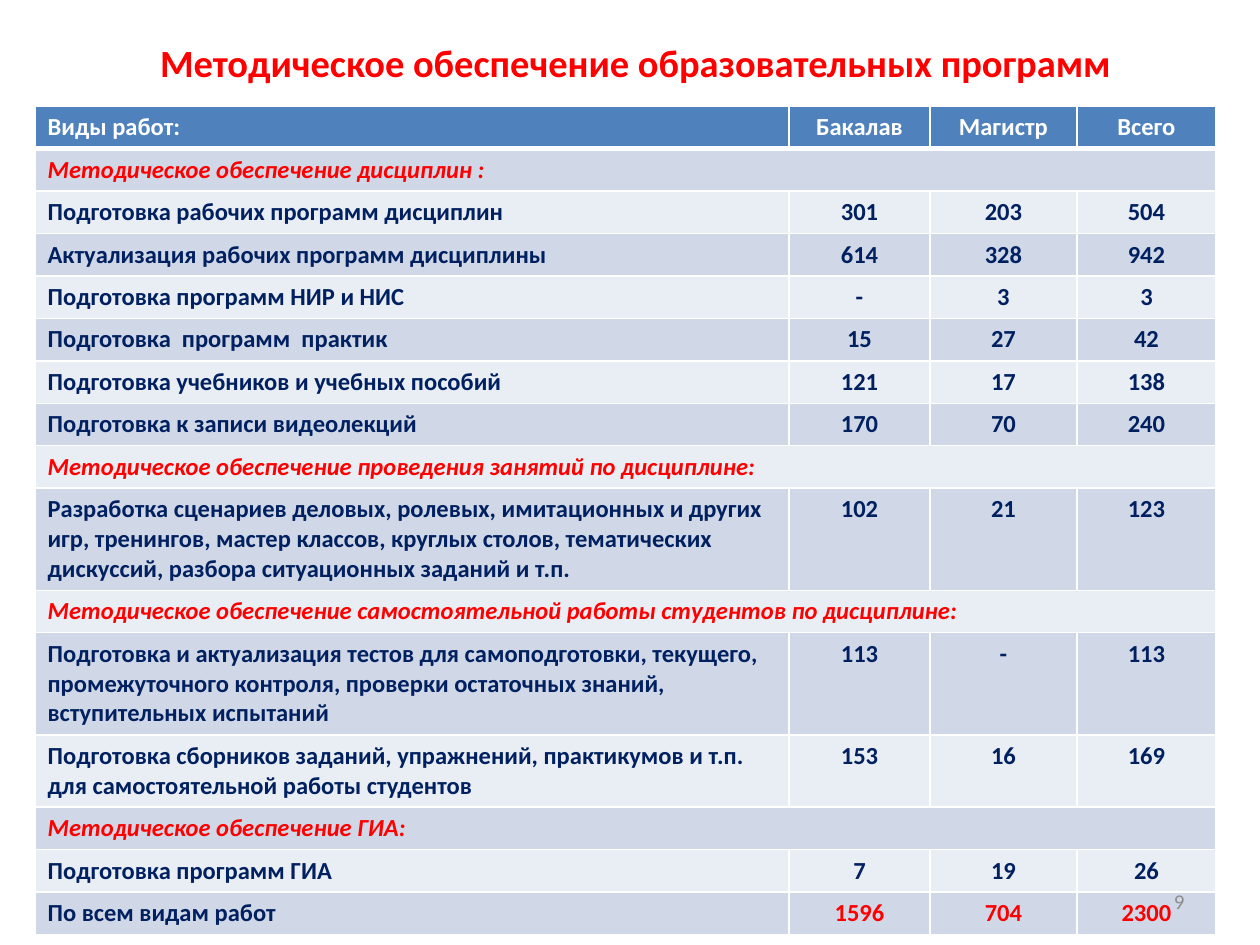
"""Build a slide with a table of methodical support for educational programmes."""
from dataclasses import dataclass

from lxml import etree
from pptx import Presentation
from pptx.dml.color import RGBColor
from pptx.enum.text import MSO_ANCHOR, PP_ALIGN
from pptx.oxml.ns import qn
from pptx.util import Emu, Pt

LEFT, CENTER, RIGHT = PP_ALIGN.LEFT, PP_ALIGN.CENTER, PP_ALIGN.RIGHT
MIDDLE = MSO_ANCHOR.MIDDLE
TITLE_ONLY = 5
EMU_PER_PX = 914400 / 126
FONT = "Calibri"
COLORS = {
    "red": "FF0000",
    "navy": "002060",
    "white": "FFFFFF",
    "gray": "8C8C8C",
    "header": "4F81BD",
    "dark_band": "D0D8E8",
    "light_band": "E9EDF4",
}
COLUMN_WIDTHS = (754, 141, 147, 139)
HEIGHT_BY_LINES = {1: 42, 2: 72, 3: 102}


@dataclass
class Row:
    label: str
    values: tuple[str, ...] = ()
    lines: int = 1
    label_color: str = "navy"
    value_color: str = "navy"


def section(label: str) -> Row:
    return Row(label, label_color="red")


ROWS = (
    Row("Виды работ:", ("Бакалав", "Магистр", "Всего"), 1, "white", "white"),
    section("Методическое обеспечение дисциплин :"),
    Row("Подготовка рабочих программ дисциплин", ("301", "203", "504")),
    Row("Актуализация рабочих программ дисциплины", ("614", "328", "942")),
    Row("Подготовка программ НИР и НИС", ("-", "3", "3")),
    Row("Подготовка  программ  практик", ("15", "27", "42")),
    Row("Подготовка учебников и учебных пособий", ("121", "17", "138")),
    Row("Подготовка к записи видеолекций", ("170", "70", "240")),
    section("Методическое обеспечение проведения занятий по дисциплине:"),
    Row("Разработка сценариев деловых, ролевых, имитационных и других игр, "
        "тренингов, мастер классов, круглых столов, тематических дискуссий, "
        "разбора ситуационных заданий и т.п.", ("102", "21", "123"), 3),
    section("Методическое обеспечение самостоятельной работы студентов по дисциплине:"),
    Row("Подготовка и актуализация тестов для самоподготовки, текущего, "
        "промежуточного контроля, проверки остаточных знаний, "
        "вступительных испытаний", ("113", "-", "113"), 3),
    Row("Подготовка сборников заданий, упражнений, практикумов и т.п. "
        "для самостоятельной работы студентов", ("153", "16", "169"), 2),
    section("Методическое обеспечение ГИА:"),
    Row("Подготовка программ ГИА", ("7", "19", "26")),
    Row("По всем видам работ", ("1596", "704", "2300"), value_color="red"),
)


def px(length: int) -> Emu:
    return Emu(round(length * EMU_PER_PX))


def rgb(name: str) -> RGBColor:
    return RGBColor.from_string(COLORS[name])


def write(text_frame, text: str, size: int, color: str, align,
          bold: bool = False, italic: bool = False) -> None:
    paragraph = text_frame.paragraphs[0]
    paragraph.text = text
    paragraph.alignment = align
    font = paragraph.font
    font.name, font.size, font.bold, font.italic = FONT, Pt(size), bold, italic
    font.color.rgb = rgb(color)


def set_borders(cell, top: int, bottom: int) -> None:
    properties = cell._tc.get_or_add_tcPr()
    for tag, points in (("lnL", 1), ("lnR", 1), ("lnT", top), ("lnB", bottom)):
        line = etree.SubElement(properties, qn(f"a:{tag}"), w=str(Pt(points)))
        fill = etree.SubElement(line, qn("a:solidFill"))
        etree.SubElement(fill, qn("a:srgbClr"), val=COLORS["white"])


def add_title(slide, text: str) -> None:
    title = slide.shapes.title
    title.left, title.top, title.width, title.height = px(74), px(0), px(1123), px(125)
    title.text_frame.vertical_anchor = MIDDLE
    write(title.text_frame, text, 22, "red", CENTER, bold=True)


def add_work_table(slide, rows: tuple[Row, ...]) -> None:
    heights = [HEIGHT_BY_LINES[row.lines] for row in rows]
    table = slide.shapes.add_table(
        len(rows), len(COLUMN_WIDTHS), px(35), px(106),
        px(sum(COLUMN_WIDTHS)), px(sum(heights))).table
    for column, width in zip(table.columns, COLUMN_WIDTHS):
        column.width = px(width)
    for index, (row, height) in enumerate(zip(rows, heights)):
        table.rows[index].height = px(height)
        band = "header" if index == 0 else ("light_band", "dark_band")[index % 2]
        cells = list(table.rows[index].cells)
        for cell in cells:
            set_borders(cell, 3 if index == 1 else 1, 3 if index == 0 else 1)
            cell.fill.solid()
            cell.fill.fore_color.rgb = rgb(band)
        write(cells[0].text_frame, row.label, 14, row.label_color, LEFT,
              bold=True, italic=not row.values)
        for cell, value in zip(cells[1:], row.values):
            write(cell.text_frame, value, 14, row.value_color, CENTER, bold=True)
        if not row.values:
            cells[0].merge(cells[-1])


def add_page_number(slide, number: str) -> None:
    box = slide.shapes.add_textbox(px(903), px(876), px(294), px(50))
    box.text_frame.word_wrap = True
    box.text_frame.vertical_anchor = MIDDLE
    write(box.text_frame, number, 12, "gray", RIGHT)


def main() -> None:
    presentation = Presentation()
    presentation.slide_width, presentation.slide_height = px(1260), px(945)
    slide = presentation.slides.add_slide(presentation.slide_layouts[TITLE_ONLY])
    add_title(slide, "Методическое обеспечение образовательных программ")
    add_work_table(slide, ROWS)
    add_page_number(slide, "9")
    presentation.save("out.pptx")


if __name__ == "__main__":
    main()
